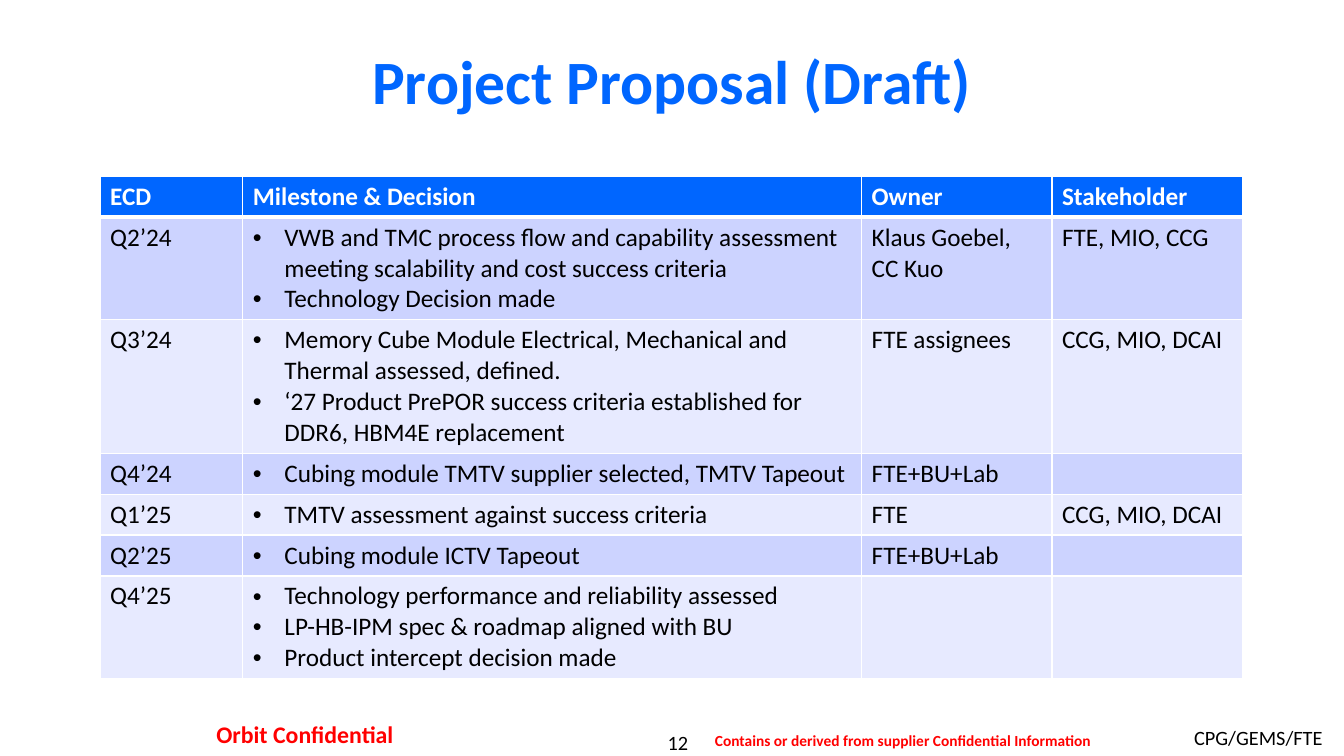
import pptx
import pptx.dml.color
import pptx.enum.text
import pptx.oxml
import pptx.oxml.ns
import pptx.util

Pt = pptx.util.Pt
ALIGN = pptx.enum.text.PP_ALIGN
ANCHOR = pptx.enum.text.MSO_ANCHOR
BLUE, RED, BLACK, WHITE = "0066FF", "FF0000", "000000", "FFFFFF"
BANDS = ("CCD3FF", "E7EAFF")
COLUMN_WIDTHS = (102, 442, 136, 136)
ROW_HEIGHT, LINE_HEIGHT = 29.25, 22
BULLET_INDENT = 22.5

HEADINGS = ("ECD", "Milestone & Decision", "Owner", "Stakeholder")
# Quarter, milestones, owner, stakeholder, text lines in the row
MILESTONES = (
    ("Q2’24",
     ("VWB and TMC process flow and capability assessment meeting scalability and cost success criteria",
      "Technology Decision made"),
     "Klaus Goebel,\vCC Kuo", "FTE, MIO, CCG", 3),
    ("Q3’24",
     ("Memory Cube Module Electrical, Mechanical and Thermal assessed, defined.",
      "‘27 Product PrePOR success criteria established for DDR6, HBM4E replacement"),
     "FTE assignees", "CCG, MIO, DCAI", 4),
    ("Q4’24", ("Cubing module TMTV supplier selected, TMTV Tapeout",), "FTE+BU+Lab", "", 1),
    ("Q1’25", ("TMTV assessment against success criteria",), "FTE", "CCG, MIO, DCAI", 1),
    ("Q2’25", ("Cubing module ICTV Tapeout",), "FTE+BU+Lab", "", 1),
    ("Q4’25",
     ("Technology performance and reliability assessed",
      "LP-HB-IPM spec & roadmap aligned with BU",
      "Product intercept decision made"),
     "", "", 3),
)


def rgb(color):
    return pptx.dml.color.RGBColor.from_string(color)


def set_font(para, size, color, bold=False):
    font = para.font
    font.name, font.size, font.bold = "Calibri", Pt(size), bold
    font.color.rgb = rgb(color)


def add_label(page, box, text, size, color, bold=False, align=ALIGN.CENTER,
              anchor=ANCHOR.TOP, insets=(7.2, 3.6)):
    frame = page.shapes.add_textbox(*map(Pt, box)).text_frame
    frame.word_wrap = True
    frame.vertical_anchor = anchor
    frame.margin_left = frame.margin_right = Pt(insets[0])
    frame.margin_top = frame.margin_bottom = Pt(insets[1])
    para = frame.paragraphs[0]
    para.text, para.alignment = text, align
    set_font(para, size, color, bold)


def add_bullet(para):
    properties = para._p.get_or_add_pPr()
    properties.set("marL", str(Pt(BULLET_INDENT)))
    properties.set("indent", str(-Pt(BULLET_INDENT)))
    namespace = pptx.oxml.ns.nsdecls("a")
    properties.append(pptx.oxml.parse_xml(f'<a:buFont {namespace} typeface="Arial"/>'))
    properties.append(pptx.oxml.parse_xml(f'<a:buChar {namespace} char="•"/>'))


def set_borders(cell, top, bottom):
    """Draw white borders; the side ones are always 1 pt wide."""
    properties = cell._tc.get_or_add_tcPr()
    for side, width in (("L", 1), ("R", 1), ("T", top), ("B", bottom)):
        properties.append(pptx.oxml.parse_xml(
            f'<a:ln{side} {pptx.oxml.ns.nsdecls("a")} w="{Pt(width)}"><a:solidFill>'
            f'<a:srgbClr val="{WHITE}"/></a:solidFill></a:ln{side}>'))


def fill_cell(cell, content, fill, color, bold=False, top=1, bottom=1):
    """Write a string, or a tuple of strings as a bulleted list."""
    set_borders(cell, top, bottom)
    cell.fill.solid()
    cell.fill.fore_color.rgb = rgb(fill)
    bulleted = isinstance(content, tuple)
    frame = cell.text_frame
    for index, text in enumerate(content if bulleted else (content,)):
        para = frame.add_paragraph() if index else frame.paragraphs[0]
        para.text = text
        if bulleted:
            add_bullet(para)
        set_font(para, 18, color, bold)


def add_milestone_table(page, left, top):
    heights = [ROW_HEIGHT] + [ROW_HEIGHT + LINE_HEIGHT * (row[-1] - 1) for row in MILESTONES]
    table = page.shapes.add_table(len(heights), len(COLUMN_WIDTHS), Pt(left), Pt(top),
                                  Pt(sum(COLUMN_WIDTHS)), Pt(sum(heights))).table
    for column, width in zip(table.columns, COLUMN_WIDTHS):
        column.width = Pt(width)
    for row, height in zip(table.rows, heights):
        row.height = Pt(height)
    for column, heading in enumerate(HEADINGS):
        fill_cell(table.cell(0, column), heading, BLUE, WHITE, bold=True, bottom=3)
    for index, milestone in enumerate(MILESTONES):
        for column, content in enumerate(milestone[:-1]):
            fill_cell(table.cell(index + 1, column), content, BANDS[index % 2], BLACK,
                      top=1 if index else 3)


def add_footer(page):
    add_label(page, (400.3, 521.3, 167.8, 17.3), "12", 14.5, BLACK, insets=(0, 0))
    add_label(page, (635.8, 514.8, 316, 25.2), "CPG/GEMS/FTE", 14.5, BLACK, align=ALIGN.RIGHT)
    add_label(page, (111.6, 509.8, 212.4, 29.5), "Orbit Confidential", 17, RED, bold=True,
              insets=(8.64, 4.32))
    add_label(page, (498.2, 517.7, 293.8, 22.3),
              "Contains or derived from supplier Confidential Information", 11, RED, bold=True,
              insets=(8.64, 4.32))


def main():
    deck = pptx.Presentation()
    deck.slide_width, deck.slide_height = Pt(960), Pt(540)
    page = deck.slides.add_slide(deck.slide_layouts[6])
    add_footer(page)
    add_label(page, (72, 24, 816, 66), "Project Proposal (Draft)", 44, BLUE, bold=True,
              anchor=ANCHOR.MIDDLE)
    add_milestone_table(page, 71.5, 126)
    deck.save("out.pptx")


if __name__ == "__main__":
    main()
